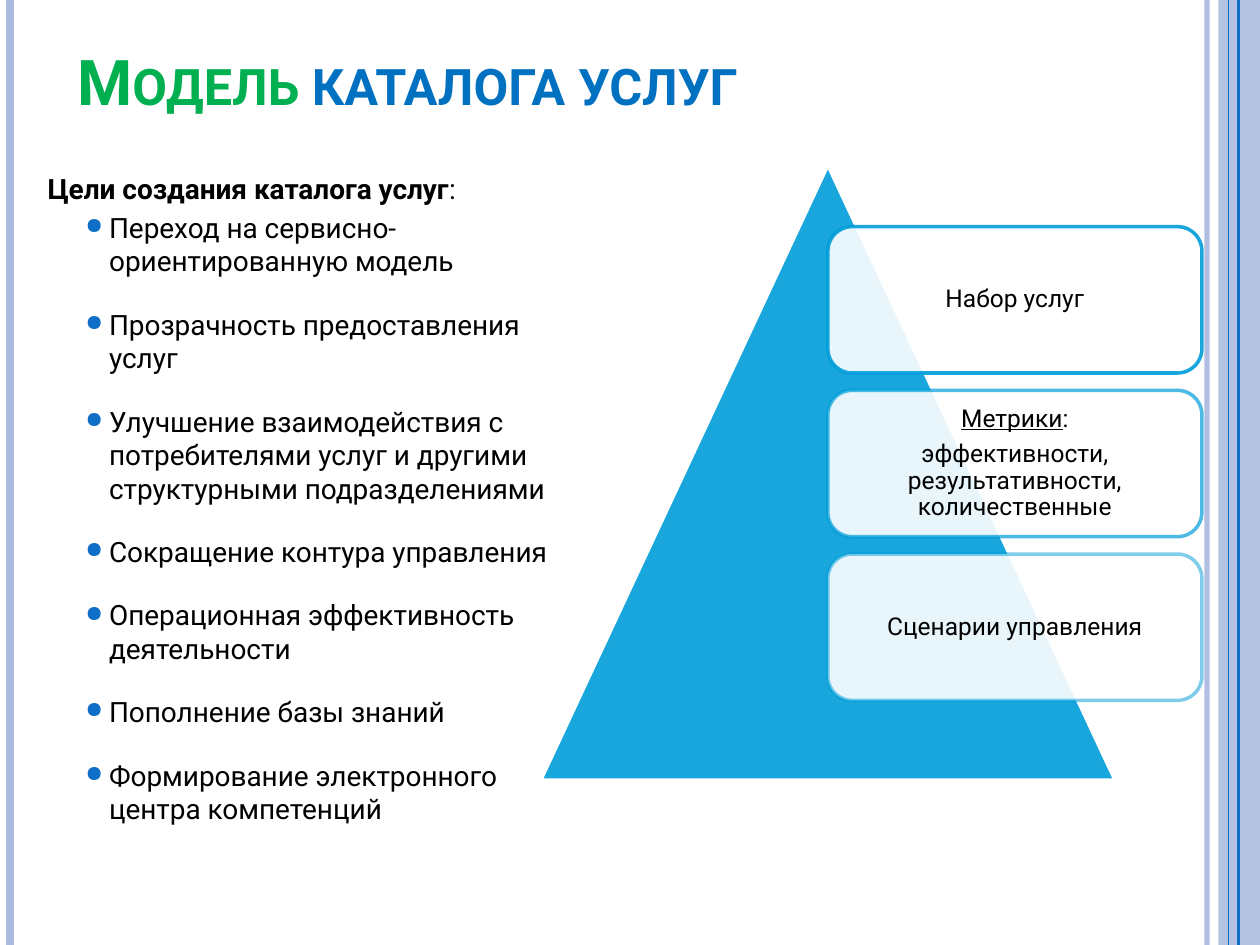
from lxml.etree import SubElement
from pptx import Presentation
from pptx.dml.color import RGBColor
from pptx.enum.shapes import MSO_CONNECTOR, MSO_SHAPE
from pptx.enum.text import MSO_ANCHOR, PP_ALIGN
from pptx.oxml.ns import qn
from pptx.util import Cm, Pt

FONT = "Roboto"
BLACK = RGBColor(0x00, 0x00, 0x00)
WHITE = RGBColor(0xFF, 0xFF, 0xFF)
GREEN = RGBColor(0x00, 0xB0, 0x50)
TITLE_BLUE = RGBColor(0x00, 0x70, 0xC0)
ACCENT_BLUE = RGBColor(0x0F, 0x6F, 0xC6)
CYAN = RGBColor(0x00, 0x9D, 0xD9)
LAVENDER = RGBColor(0xAB, 0xBB, 0xDF)

SLIDE_WIDTH, SLIDE_HEIGHT = Cm(25.4), Cm(19.05)
STRIPES = [
    (24.33, 3, LAVENDER, 93),
    (0.2, 4.5, LAVENDER, 100),
    (24.97, 1.5, ACCENT_BLUE, 100),
    (24.77, 0.75, ACCENT_BLUE, 100),
]
GOALS_HEADING = "Цели создания каталога услуг"
GOALS = [
    "Переход на сервисно-ориентированную модель",
    "Прозрачность предоставления услуг",
    "Улучшение взаимодействия с потребителями услуг и другими структурными подразделениями",
    "Сокращение контура управления",
    "Операционная эффективность деятельности",
    "Пополнение базы знаний",
    "Формирование электронного центра компетенций",
]
CARDS = [
    ([["Набор услуг"]], 90),
    ([["Метрики", ":"], ["эффективности, результативности, количественные"]], 70),
    ([["Сценарии управления"]], 50),
]


def set_opacity(element, percent):
    """Set the opacity of the first colour inside an XML element."""
    color = next(element.iter(qn("a:srgbClr")))
    SubElement(color, qn("a:alpha")).set("val", str(percent * 1000))


def add_run(paragraph, text, size, color=BLACK, bold=False):
    """Append a formatted run to a paragraph."""
    run = paragraph.add_run()
    run.text = text
    run.font.name = FONT
    run.font.size = Pt(size)
    run.font.bold = bold
    run.font.color.rgb = color
    return run


def add_filled_shape(slide, kind, box, color, opacity):
    """Add a translucent preset shape without shadow."""
    shape = slide.shapes.add_shape(kind, *box)
    shape.shadow.inherit = False
    shape.fill.solid()
    shape.fill.fore_color.rgb = color
    set_opacity(shape.fill._xPr.find(qn("a:solidFill")), opacity)
    return shape


def outline(shape, color, opacity=100):
    """Give a shape a two-point outline."""
    shape.line.width = Pt(2)
    shape.line.color.rgb = color
    set_opacity(shape._element.spPr.find(qn("a:ln")), opacity)


def add_side_stripes(slide):
    """Draw the vertical lines and the band along the slide edges."""
    band_box = (Cm(24.56), 0, Cm(0.84), SLIDE_HEIGHT)
    band = add_filled_shape(slide, MSO_SHAPE.RECTANGLE, band_box, LAVENDER, 87)
    band.line.fill.background()
    for x, width, color, opacity in STRIPES:
        stripe = slide.shapes.add_connector(
            MSO_CONNECTOR.STRAIGHT, Cm(x), 0, Cm(x), SLIDE_HEIGHT
        )
        stripe.line.width = Pt(width)
        stripe.line.color.rgb = color
        properties = stripe._element.spPr
        set_opacity(properties.find(qn("a:ln")), opacity)
        SubElement(properties, qn("a:effectLst"))


def fill_title(slide, left, top, width, height):
    """Place the title and set its two-coloured small caps."""
    title = slide.shapes.title
    title.left, title.top, title.width, title.height = left, top, width, height
    title.text_frame.vertical_anchor = MSO_ANCHOR.BOTTOM
    paragraph = title.text_frame.paragraphs[0]
    paragraph.alignment = PP_ALIGN.LEFT
    for text, color in (("Модель ", GREEN), ("каталога услуг", TITLE_BLUE)):
        run = add_run(paragraph, text, 36, color, bold=True)
        run.font._element.set("cap", "small")


def add_bullet(paragraph):
    """Give a paragraph a hanging indent and a round blue bullet."""
    properties = paragraph._p.get_or_add_pPr()
    properties.set("marL", str(Cm(1.24)))
    properties.set("indent", str(Cm(-0.48)))
    color = SubElement(properties, qn("a:buClr"))
    SubElement(color, qn("a:srgbClr")).set("val", str(ACCENT_BLUE))
    SubElement(properties, qn("a:buSzPct")).set("val", "80000")
    SubElement(properties, qn("a:buChar")).set("char", "●")


def add_goals(slide, left, top, width, height):
    """Add the heading and the bulleted list of goals."""
    text_frame = slide.shapes.add_textbox(left, top, width, height).text_frame
    text_frame.word_wrap = True
    heading = text_frame.paragraphs[0]
    add_run(heading, GOALS_HEADING, 16, bold=True)
    add_run(heading, ":", 16)
    for index, goal in enumerate(GOALS):
        paragraph = text_frame.add_paragraph()
        paragraph.space_before = Pt(17 if index else 3)
        add_bullet(paragraph)
        add_run(paragraph, goal, 16)


def add_card(slide, box, lines, opacity):
    """Add one rounded card with centred text, its label underlined."""
    card = add_filled_shape(slide, MSO_SHAPE.ROUNDED_RECTANGLE, box, WHITE, 90)
    outline(card, CYAN, opacity)
    text_frame = card.text_frame
    text_frame.word_wrap = True
    text_frame.vertical_anchor = MSO_ANCHOR.MIDDLE
    text_frame.margin_left = text_frame.margin_right = Cm(0.15)
    text_frame.margin_top = text_frame.margin_bottom = Cm(0.15)
    for index, parts in enumerate(lines):
        paragraph = text_frame.add_paragraph() if index else text_frame.paragraphs[0]
        paragraph.alignment = PP_ALIGN.CENTER
        paragraph.line_spacing = 0.9
        paragraph.space_after = Pt(5)
        runs = [add_run(paragraph, part, 14) for part in parts]
        runs[0].font.underline = len(runs) > 1


def add_pyramid(slide, left, top, width, height):
    """Add the triangle and the column of cards over its right half."""
    triangle = add_filled_shape(
        slide, MSO_SHAPE.ISOSCELES_TRIANGLE, (left, top, width, height), CYAN, 90
    )
    outline(triangle, WHITE)
    for index, (lines, opacity) in enumerate(CARDS):
        card_top = top + Cm(1.24) + index * Cm(3.3)
        box = (left + width // 2, card_top, Cm(7.54), Cm(2.95))
        add_card(slide, box, lines, opacity)


def main():
    """Build the slide and save the presentation."""
    presentation = Presentation()
    presentation.slide_width, presentation.slide_height = SLIDE_WIDTH, SLIDE_HEIGHT
    slide = presentation.slides.add_slide(presentation.slide_layouts[5])
    add_side_stripes(slide)
    add_pyramid(slide, Cm(10.9), Cm(3.33), Cm(11.58), Cm(12.4))
    fill_title(slide, Cm(1.3), Cm(0.91), Cm(22.86), Cm(1.6))
    add_goals(slide, Cm(0.71), Cm(3.33), Cm(10.8), Cm(13.79))
    presentation.save("out.pptx")


if __name__ == "__main__":
    main()
